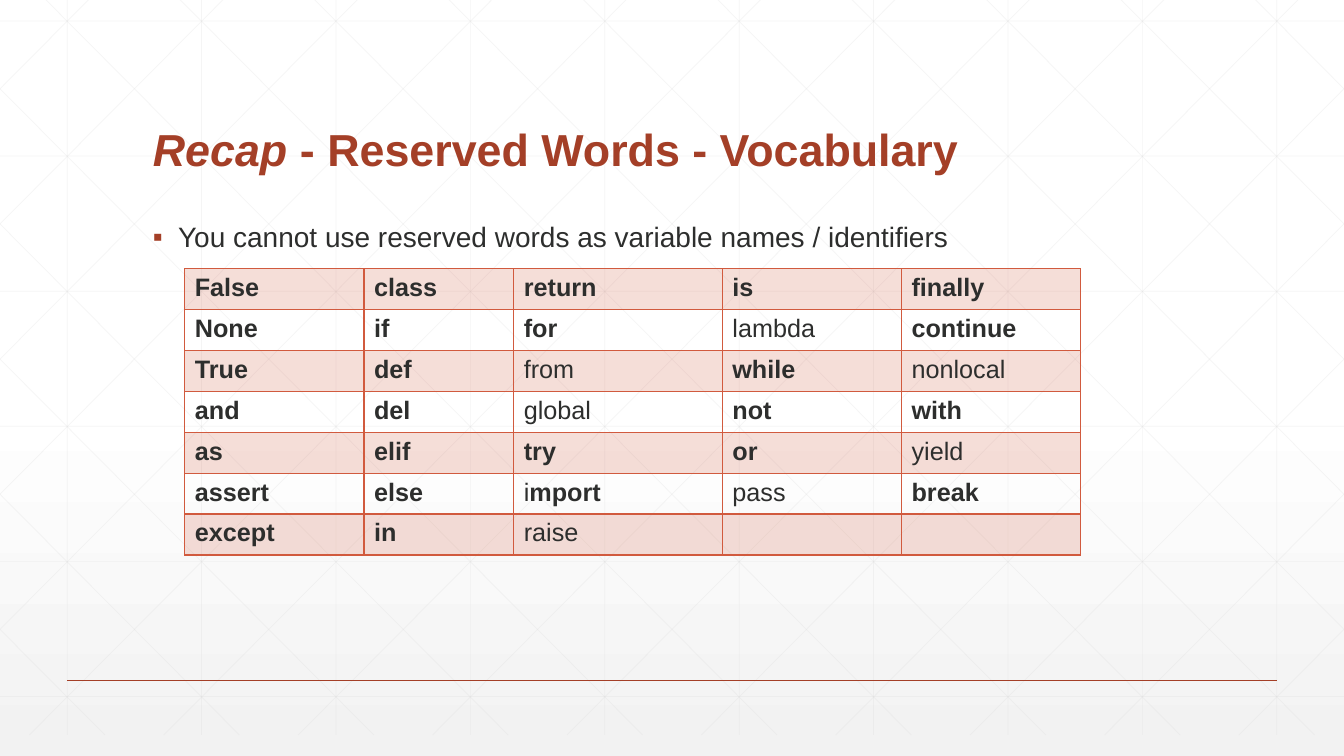
"""Build a recap slide listing the reserved words of Python."""
import copy
import dataclasses

import lxml.etree
import pptx
import pptx.dml.color
import pptx.enum.shapes
import pptx.enum.text
import pptx.oxml
import pptx.oxml.ns
import pptx.util

Pt = pptx.util.Pt
RGB = pptx.dml.color.RGBColor.from_string
qn = pptx.oxml.ns.qn


@dataclasses.dataclass(frozen=True)
class Theme:
    font: str = "Arial"
    rust: str = "A43F27"
    coral: str = "D15A3E"
    ink: str = "2D2E2D"
    grid: str = "D9D9D9"
    white: str = "FFFFFF"
    mist: str = "F2F2F2"
    title_size: int = 32
    body_size: int = 20
    word_size: int = 18


theme = Theme()


def add_rule(shapes, start, end, color, width, opacity=100):
    rule = shapes.add_connector(
        pptx.enum.shapes.MSO_CONNECTOR.STRAIGHT, *map(Pt, (*start, *end)))
    rule.line.color.rgb = RGB(color)
    rule.line.width = Pt(width)
    properties = rule._element.spPr
    lxml.etree.SubElement(properties, qn("a:effectLst"))
    if opacity < 100:
        tint = properties.find(".//" + qn("a:srgbClr"))
        lxml.etree.SubElement(tint, qn("a:alpha"), val=str(opacity * 1000))


def add_run(paragraph, text, size, color, bold=False, italic=False):
    run = paragraph.add_run()
    run.text = text
    run.font.name = theme.font
    run.font.size = Pt(size)
    run.font.color.rgb = RGB(color)
    run.font.bold = bold
    run.font.italic = italic


deck = pptx.Presentation()
deck.slide_width, deck.slide_height = Pt(960), Pt(540)
slide = deck.slides.add_slide(deck.slide_layouts[1])

backdrop = slide.background.fill
backdrop.gradient()
backdrop.gradient_angle = 270
first_stop = backdrop.gradient_stops[0]._gs
first_stop.addnext(copy.deepcopy(first_stop))
for stop, (position, color) in zip(
        backdrop.gradient_stops,
        [(0, theme.white), (0.53, theme.white), (1, theme.mist)]):
    stop.position = position
    stop.color.rgb = RGB(color)

top, bottom, diagonal_run = -15, 525, 537
lattice_lines = [((48 + 96 * i, top), (48 + 96 * i, bottom)) for i in range(10)]
lattice_lines += [((0, 15 + 96.5 * i), (960, 15 + 96.5 * i)) for i in range(6)]
slope = (bottom - top) / diagonal_run
for i in range(-5, 10):
    origin = 18 + 96 * i
    left, right = max(origin, 0), min(origin + diagonal_run, 960)
    upper, lower = (top + (x - origin) * slope for x in (left, right))
    lattice_lines.append(((left, upper), (right, lower)))
    lattice_lines.append(((960 - left, upper), (960 - right, lower)))

lattice = slide.shapes.add_group_shape()
for start, end in lattice_lines:
    add_rule(lattice.shapes, start, end, theme.grid, 0.5, opacity=25)
slide.shapes._spTree.insert(2, lattice._element)
add_rule(slide.shapes, (48, 486), (912, 486), theme.rust, 1)

heading = slide.shapes.title
heading.left, heading.top, heading.width, heading.height = map(Pt, (102, 39.6, 756, 90))
heading.text_frame.vertical_anchor = pptx.enum.text.MSO_ANCHOR.BOTTOM
heading_line = heading.text_frame.paragraphs[0]
heading_line.alignment = pptx.enum.text.PP_ALIGN.LEFT
heading_line.line_spacing = 0.9
add_run(heading_line, "Recap", theme.title_size, theme.rust, bold=True, italic=True)
add_run(heading_line, " - Reserved Words - Vocabulary", theme.title_size, theme.rust, bold=True)

advice = slide.placeholders[1]
advice.left, advice.top, advice.width, advice.height = map(Pt, (102, 156, 756, 300))
advice_line = advice.text_frame.paragraphs[0]
advice_line.line_spacing = 0.9
advice_line.space_before = Pt(18)
add_run(advice_line, "You cannot use reserved words as variable names / identifiers",
        theme.body_size, theme.ink)
bullet = advice_line._p.get_or_add_pPr()
bullet.set("marL", str(Pt(18)))
bullet.set("indent", str(-Pt(18)))
bullet_color = lxml.etree.SubElement(bullet, qn("a:buClr"))
lxml.etree.SubElement(bullet_color, qn("a:srgbClr"), val=theme.rust)
lxml.etree.SubElement(bullet, qn("a:buFont"), typeface=theme.font)
lxml.etree.SubElement(bullet, qn("a:buChar"), char="▪")

reserved_words = [
    ["False", "class", "return", "is", "finally"],
    ["None", "if", "for", "lambda", "continue"],
    ["True", "def", "from", "while", "nonlocal"],
    ["and", "del", "global", "not", "with"],
    ["as", "elif", "try", "or", "yield"],
    ["assert", "else", "import", "pass", "break"],
    ["except", "in", "raise", "", ""],
]
light_words = {"lambda", "from", "nonlocal", "global", "yield", "pass", "raise"}
column_widths = [128, 107, 149, 128, 128]
row_height = 29.2

vocabulary = slide.shapes.add_table(
    len(reserved_words), len(column_widths), Pt(132), Pt(192),
    Pt(sum(column_widths)), Pt(row_height * len(reserved_words))).table
vocabulary.first_row = False
vocabulary.horz_banding = False
for column, width in zip(vocabulary.columns, column_widths):
    column.width = Pt(width)

for r, words in enumerate(reserved_words):
    vocabulary.rows[r].height = Pt(row_height)
    for c, word in enumerate(words):
        cell = vocabulary.cell(r, c)
        if r % 2 == 0:
            cell.fill.solid()
            cell.fill.fore_color.rgb = RGB(theme.coral)
            tint = cell._tc.tcPr.find(".//" + qn("a:srgbClr"))
            lxml.etree.SubElement(tint, qn("a:alpha"), val="20000")
        else:
            cell.fill.background()
        for position, side in enumerate(("lnL", "lnR", "lnT", "lnB")):
            border = pptx.oxml.parse_xml(
                f'<a:{side} {pptx.oxml.ns.nsdecls("a")} w="{Pt(1)}"><a:solidFill>'
                f'<a:srgbClr val="{theme.coral}"/></a:solidFill></a:{side}>')
            cell._tc.tcPr.insert(position, border)
        if word == "import":
            pieces = [("i", False), ("mport", True)]
        else:
            pieces = [(word, word not in light_words)] if word else []
        for text, bold in pieces:
            add_run(cell.text_frame.paragraphs[0], text, theme.word_size, theme.ink, bold)

deck.save("out.pptx")
